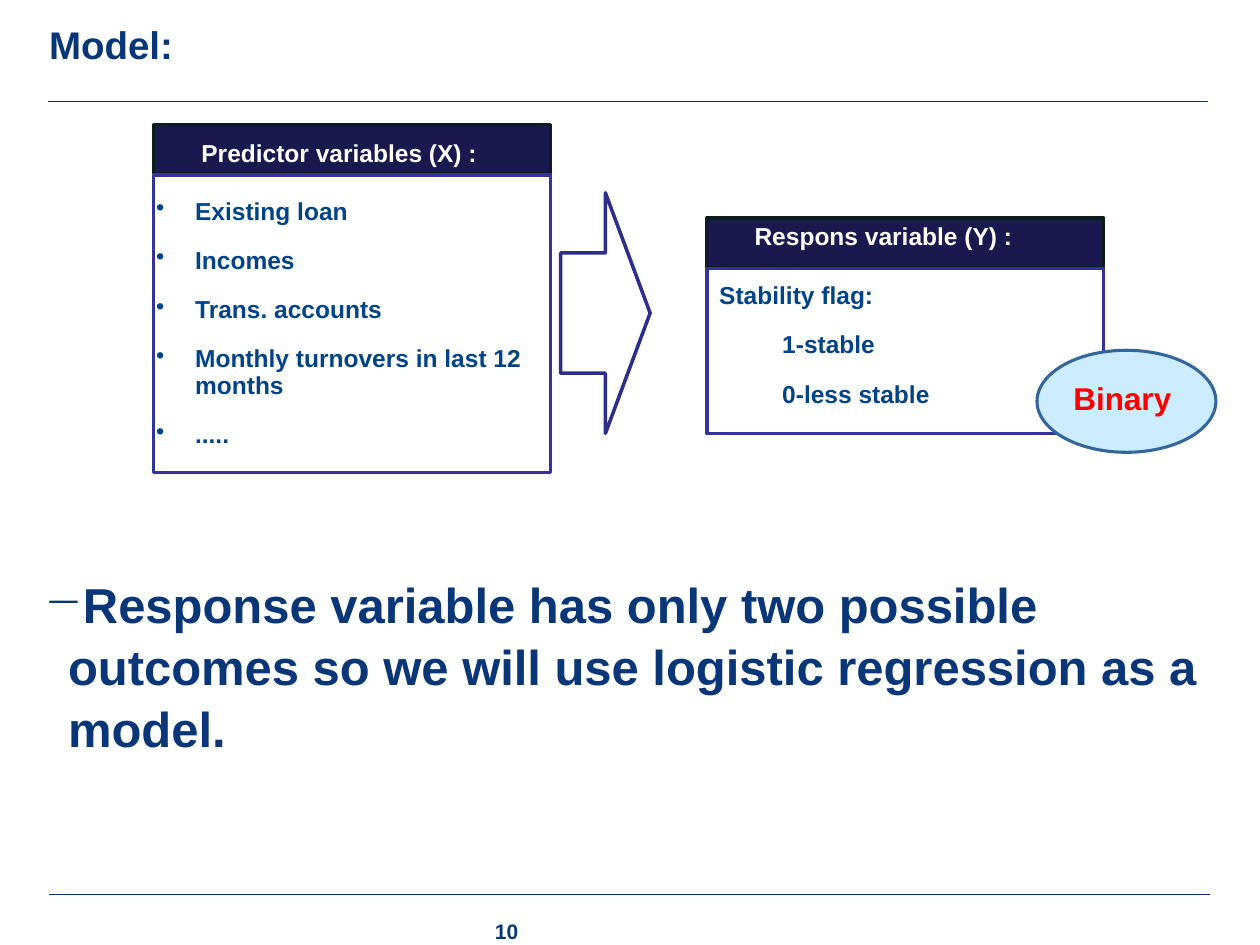
from dataclasses import dataclass

from lxml.etree import SubElement
from pptx import Presentation
from pptx.dml.color import RGBColor as Rgb
from pptx.enum.shapes import MSO_CONNECTOR as Link, MSO_SHAPE as Kind
from pptx.oxml.ns import qn
from pptx.util import Inches, Pt


@dataclass(frozen=True)
class Theme:
    font: str = "Arial"
    navy: str = "083676"
    ink: str = "004386"
    white: str = "FFFFFF"
    red: str = "FF0000"
    head: str = "19194D"
    rim: str = "0C1C1D"
    frame: str = "333399"
    arrow: str = "2D2D8A"
    sky: str = "CCECFF"
    steel: str = "336699"
    small: int = 12
    base: int = 14
    mid: int = 18
    title: int = 22
    big: int = 28


T = Theme()
COLS, ROWS = 100, 75
WIDTH, HEIGHT = Inches(10), Inches(7.5)


def grid(col, row):
    """Turn columns and rows into slide lengths."""
    return round(WIDTH * col / COLS), round(HEIGHT * row / ROWS)


def area(col, row, cols, rows):
    return *grid(col, row), *grid(cols, rows)


def rule(slide, col, row, end):
    line = slide.shapes.add_connector(Link.STRAIGHT, *grid(col, row), *grid(end, row))
    line.line.color.rgb = Rgb.from_string(T.navy)
    line.line.width = Pt(1)
    SubElement(line._element.spPr, qn("a:effectLst"))


def shape(slide, kind, place, fill, edge, width=2):
    item = slide.shapes.add_shape(kind, *area(*place))
    item.shadow.inherit = False
    item.fill.solid()
    item.fill.fore_color.rgb = Rgb.from_string(fill)
    item.line.color.rgb = Rgb.from_string(edge)
    item.line.width = Pt(width)


def text(slide, lines, place, size=T.base, color=T.navy, bullet=None,
         indent=0, space=0.9, before=6, after=7, inset=True):
    box = slide.shapes.add_textbox(*area(*place))
    frame = box.text_frame
    frame.word_wrap = True
    if not inset:
        frame.margin_left = frame.margin_right = 0
        frame.margin_top = frame.margin_bottom = 0
    for i, line in enumerate(lines):
        para = frame.paragraphs[0] if i == 0 else frame.add_paragraph()
        para.line_spacing = space
        para.space_before = Pt(before if i else 0)
        para.space_after = Pt(after)
        if bullet:
            props = para._p.get_or_add_pPr()
            props.set("marL", str(Inches(indent)))
            props.set("indent", str(-Inches(indent)))
            SubElement(props, qn("a:buChar"), char=bullet)
        run = para.add_run()
        run.text = line
        run.font.name, run.font.size, run.font.bold = T.font, Pt(size), True
        run.font.color.rgb = Rgb.from_string(color)


def panel(slide, col, row, rows, title, drop):
    """Dark header with a framed body below it."""
    cols, head = 31.5, 3.9
    shape(slide, Kind.RECTANGLE, (col, row, cols, head), T.head, T.rim, 1.75)
    shape(slide, Kind.RECTANGLE, (col, row + 4, cols, rows), T.white, T.frame)
    text(slide, [title], (col + 2.8, row + drop, 26, 3.1), color=T.white)


def main():
    deck = Presentation()
    deck.slide_width, deck.slide_height = WIDTH, HEIGHT
    slide = deck.slides.add_slide(deck.slide_layouts[6])

    # Title and rules
    rule(slide, 3.9, 71, 96)
    rule(slide, 3.8, 8.05, 95.9)
    text(slide, ["Model:"], (3.9, 1.7, 75.2, 5), size=T.title,
         space=1, after=0, inset=False)

    # Predictors
    panel(slide, 12.2, 9.9, 23.6, "Predictor variables (X) :", 0.8)
    text(slide, ["Existing loan", "Incomes", "Trans. accounts",
                 "Monthly turnovers in last 12 months", "....."],
         (11.4, 15.3, 33.1, 22.2), color=T.ink, bullet="•", indent=0.31)

    # Arrow to the response
    shape(slide, Kind.RIGHT_ARROW, (44.5, 15.3, 7.1, 19.1), T.white, T.arrow)

    # Response
    panel(slide, 56.1, 17.3, 13.1, "Respons variable (Y) :", 0)
    text(slide, ["Stability flag:", "\t1-stable", "\t0-less stable"],
         (56.1, 22, 31.5, 11.6), color=T.ink)
    shape(slide, Kind.OVAL, (82.3, 27.8, 14.2, 8.1), T.sky, T.steel, 1.75)
    text(slide, ["Binary"], (84.2, 29.9, 13.2, 3.7), size=T.mid, color=T.red)

    # Conclusion
    text(slide, ["Response variable has only two possible outcomes "
                 "so we will use logistic regression as a model."],
         (3.5, 45.4, 92.1, 22.8), size=T.big, bullet="−", indent=0.19,
         space=1.05, after=0, inset=False)

    # Page number
    text(slide, ["10"], (38.3, 72.6, 23.3, 2.4), size=T.small, after=0)

    deck.save("out.pptx")


if __name__ == "__main__":
    main()
